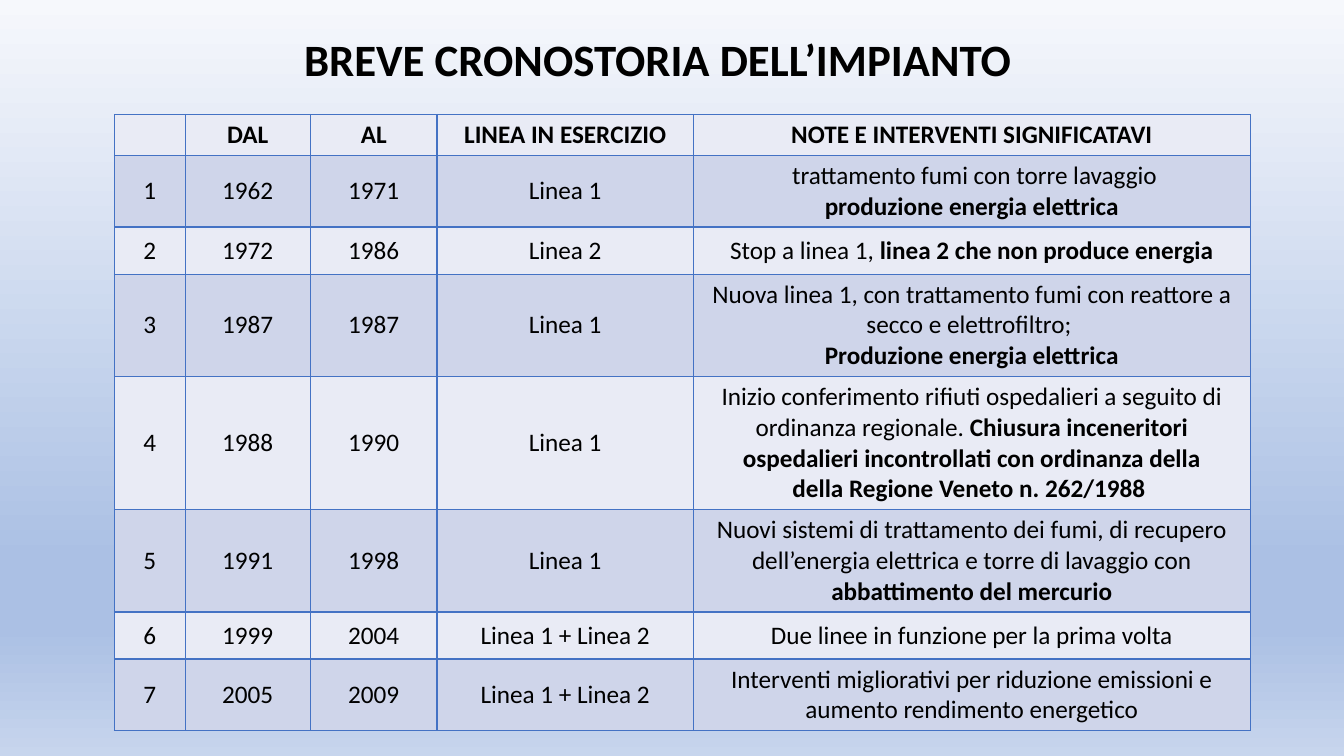
from lxml import etree
from copy import deepcopy
from pptx import Presentation
from pptx.dml.color import RGBColor
from pptx.enum.text import MSO_ANCHOR, MSO_AUTO_SIZE, PP_ALIGN
from pptx.oxml.ns import qn
from pptx.util import Pt

LEFT, CENTER = PP_ALIGN.LEFT, PP_ALIGN.CENTER
TOP, MIDDLE = MSO_ANCHOR.TOP, MSO_ANCHOR.MIDDLE
NO_AUTOSIZE = MSO_AUTO_SIZE.NONE

BLACK = RGBColor(0x00, 0x00, 0x00)
BORDER = RGBColor(0x44, 0x72, 0xC4)
LIGHT_BAND = RGBColor(0xE9, 0xEB, 0xF5)
DARK_BAND = RGBColor(0xCF, 0xD5, 0xEA)
SKY_TOP = RGBColor(0xF6, 0xF8, 0xFC)
SKY_DEEP = RGBColor(0xAB, 0xC0, 0xE4)
SKY_END = RGBColor(0xC7, 0xD5, 0xED)
SKY = [(0, SKY_TOP), (0.74, SKY_DEEP), (0.83, SKY_DEEP), (1, SKY_END)]

TITLE = "BREVE CRONOSTORIA DELL’IMPIANTO"
COLUMN_WIDTHS = [50.5, 89.5, 90.5, 183, 398]
ROW_HEIGHTS = [29.3, 50, 33.6, 72, 93.6, 72, 33.6, 50]
# ** switches bold on and off; a line feed starts a paragraph.
HISTORY = [
    ("", "**DAL**", "**AL**", "**LINEA IN ESERCIZIO**",
     "**NOTE E INTERVENTI SIGNIFICATAVI**"),
    ("1", "1962", "1971", "Linea 1",
     " trattamento fumi con torre lavaggio\n**produzione energia elettrica**"),
    ("2", "1972", "1986", "Linea 2",
     "Stop a linea 1, **linea 2 che non produce energia**"),
    ("3", "1987", "1987", "Linea 1",
     "Nuova linea 1, con trattamento fumi con reattore a secco e elettrofiltro; \n"
     "**Produzione energia elettrica**"),
    ("4", "1988", "1990", "Linea 1",
     "Inizio conferimento rifiuti ospedalieri a seguito di ordinanza regionale. "
     "**Chiusura inceneritori ospedalieri incontrollati con ordinanza della**\n"
     "**della Regione Veneto n. 262/1988 **"),
    ("5", "1991", "1998", "Linea 1",
     "Nuovi sistemi di trattamento dei fumi, di recupero dell’energia elettrica "
     "e torre di lavaggio con **abbattimento del mercurio**"),
    ("6", "1999", "2004", "Linea 1 + Linea 2",
     "Due linee in funzione per la prima volta"),
    ("7", "2005", "2009", "Linea 1 + Linea 2",
     "Interventi migliorativi per riduzione emissioni e aumento rendimento "
     "energetico"),
]


def set_all(obj, values):
    for name, value in values.items():
        setattr(obj, name, value)


class SlideBuilder:
    font = "Calibri"
    title_size = 32
    table_size = 18

    def __init__(self, prs):
        self.slide = prs.slides.add_slide(prs.slide_layouts[5])

    def background(self, stops):
        fill = self.slide.background.fill
        fill.gradient()
        fill.gradient_angle = 270
        gs_list = self.slide.element.find(".//" + qn("a:gsLst"))
        while len(gs_list) < len(stops):
            gs_list.append(deepcopy(gs_list[0]))
        for stop, (position, color) in zip(fill.gradient_stops, stops):
            stop.position = position
            stop.color.rgb = color

    def fill_text(self, tf, text, size, align):
        """Fill a text frame, reading the bold marks in the text."""
        for i, line in enumerate(text.split("\n")):
            p = tf.add_paragraph() if i else tf.paragraphs[0]
            set_all(p, {"alignment": align, "line_spacing": 1.0})
            for j, part in enumerate(line.split("**")):
                if part:
                    r = p.add_run()
                    r.text = part
                    set_all(r.font, {"name": self.font, "size": Pt(size),
                                     "bold": j % 2 == 1})
                    r.font.color.rgb = BLACK

    def title(self, text, left, top, width, height):
        sp = self.slide.shapes.title
        set_all(sp, {"left": Pt(left), "top": Pt(top),
                     "width": Pt(width), "height": Pt(height)})
        tf = sp.text_frame
        set_all(tf, {"word_wrap": True, "auto_size": NO_AUTOSIZE,
                     "vertical_anchor": TOP})
        self.fill_text(tf, f"**{text}**", self.title_size, LEFT)

    def cell_borders(self, cell, color, width):
        tc_pr = cell._tc.get_or_add_tcPr()
        for i, side in enumerate(("a:lnL", "a:lnR", "a:lnT", "a:lnB")):
            ln = etree.Element(qn(side), w=str(Pt(width)))
            fill = etree.SubElement(ln, qn("a:solidFill"))
            etree.SubElement(fill, qn("a:srgbClr"), val=str(color))
            tc_pr.insert(i, ln)

    def table(self, rows, left, top, widths, heights):
        table = self.slide.shapes.add_table(
            len(rows), len(widths), Pt(left), Pt(top),
            Pt(sum(widths)), Pt(sum(heights))).table
        set_all(table, {"first_row": False, "horz_banding": False})
        for column, width in zip(table.columns, widths):
            column.width = Pt(width)
        for i, (row, height, texts) in enumerate(zip(table.rows, heights, rows)):
            row.height = Pt(height)
            for cell, text in zip(row.cells, texts):
                cell.vertical_anchor = MIDDLE
                cell.fill.solid()
                cell.fill.fore_color.rgb = DARK_BAND if i % 2 else LIGHT_BAND
                self.cell_borders(cell, BORDER, 1)
                self.fill_text(cell.text_frame, text, self.table_size, CENTER)


def main():
    prs = Presentation()
    set_all(prs, {"slide_width": Pt(960), "slide_height": Pt(540)})
    builder = SlideBuilder(prs)
    builder.background(SKY)
    builder.title(TITLE, 210, 18.7, 555, 46)
    builder.table(HISTORY, 81.75, 81.75, COLUMN_WIDTHS, ROW_HEIGHTS)
    prs.save("out.pptx")


if __name__ == "__main__":
    main()
